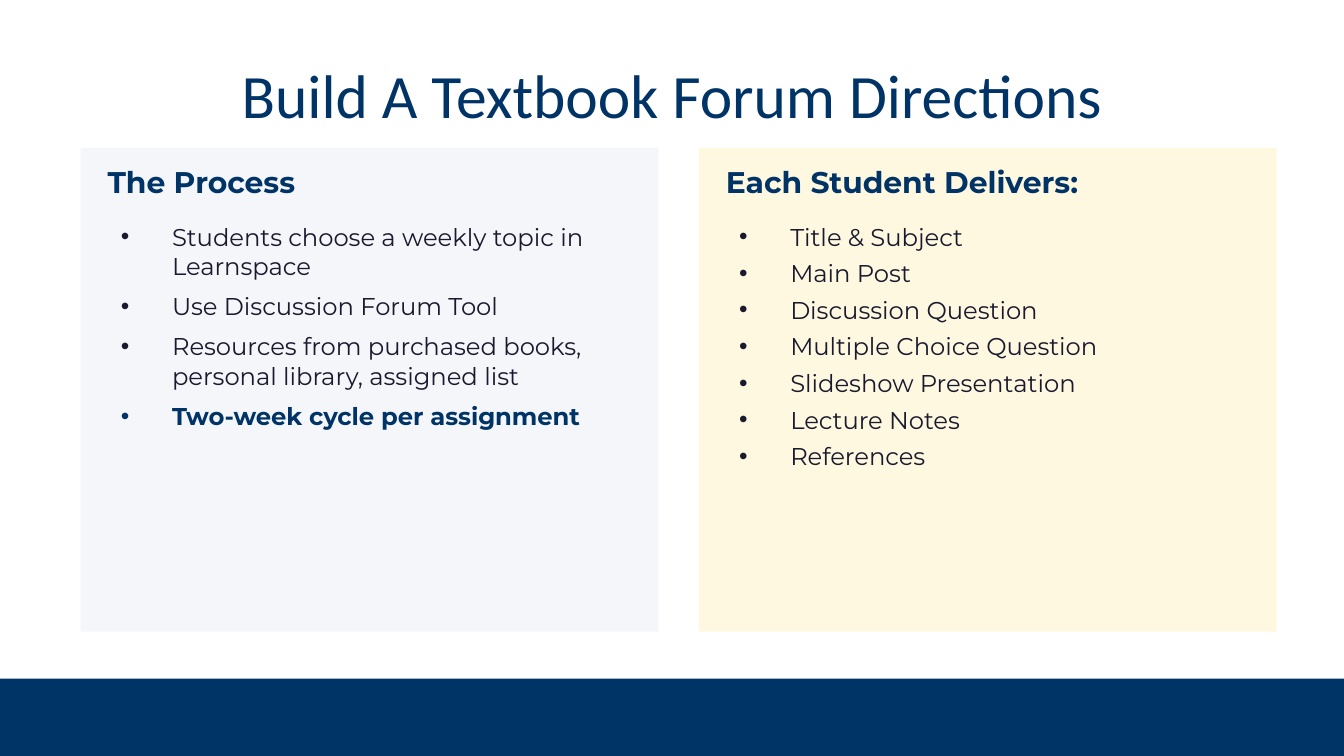
from pptx import Presentation
from pptx.dml.color import RGBColor
from pptx.enum.shapes import MSO_SHAPE
from pptx.enum.text import MSO_ANCHOR, MSO_AUTO_SIZE, PP_ALIGN
from pptx.util import Inches, Pt

WIDTH = 10
HEIGHT = WIDTH * 9 / 16
NAVY, INK = "003366", "1A1A2E"
FONT = "Montserrat"

# Column grid
LEFT, COL_W, GAP = 0.6, 4.3, 0.3
TOP, COL_H = 1.1, 3.6
PAD = 0.2
INDENT = 0.38
BAND_TOP = 5.05

# Heading, panel fill, space after each item, items, number of closing items in bold
COLUMNS = [
    ("The Process", "F5F6FA", 6, [
        "Students choose a weekly topic in Learnspace",
        "Use Discussion Forum Tool",
        "Resources from purchased books, personal library, assigned list",
        "Two-week cycle per assignment",
    ], 1),
    ("Each Student Delivers:", "FFF8E1", 4, [
        "Title & Subject",
        "Main Post",
        "Discussion Question",
        "Multiple Choice Question",
        "Slideshow Presentation",
        "Lecture Notes",
        "References",
    ], 0),
]


def color(hex_code):
    return RGBColor.from_string(hex_code)


def place(s, left, top, width, height):
    s.left, s.top = Inches(left), Inches(top)
    s.width, s.height = Inches(width), Inches(height)


def style(p, size, hex_code, bold=False, name=FONT):
    p.space_before = Pt(0)
    for r in p.runs:
        r.font.name, r.font.size, r.font.bold = name, Pt(size), bold
        r.font.color.rgb = color(hex_code)


def add_panel(slide, left, top, width, height, fill):
    """Add a plain rectangle behind everything else."""
    sp = slide.shapes.add_shape(MSO_SHAPE.RECTANGLE, Inches(left), Inches(top),
                                Inches(width), Inches(height))
    sp.shadow.inherit = False
    sp.fill.solid()
    sp.fill.fore_color.rgb = color(fill)
    sp.line.fill.background()
    slide.shapes._spTree.insert(2, sp._element)


def set_title(s, text):
    place(s, 0.5, 0.23, WIDTH - 1, 0.94)
    tf = s.text_frame
    tf.text = text
    tf.auto_size = MSO_AUTO_SIZE.NONE
    tf.vertical_anchor = MSO_ANCHOR.MIDDLE
    tf.paragraphs[0].alignment = PP_ALIGN.CENTER
    style(tf.paragraphs[0], 33, NAVY, name="Calibri")


def set_heading(s, left, text):
    place(s, left, TOP + 0.05, 4, 0.4)
    tf = s.text_frame
    tf.text = text
    tf.auto_size = MSO_AUTO_SIZE.NONE
    tf.vertical_anchor = MSO_ANCHOR.MIDDLE
    tf.margin_left = tf.margin_right = tf.margin_top = tf.margin_bottom = 0
    style(tf.paragraphs[0], 16, NAVY, bold=True)


def set_list(s, left, items, space_after, bold_count):
    place(s, left, TOP + 0.5, COL_W - 2 * PAD, 2.8)
    tf = s.text_frame
    tf.text = "\n".join(items)
    tf.auto_size = MSO_AUTO_SIZE.NONE
    for i, p in enumerate(tf.paragraphs):
        pPr = p._p.get_or_add_pPr()
        pPr.set("marL", str(Inches(INDENT)))
        pPr.set("indent", str(-Inches(INDENT)))
        p.space_after = Pt(space_after)
        bold = i >= len(items) - bold_count
        style(p, 13, NAVY if bold else INK, bold)


def main():
    prs = Presentation()
    prs.slide_width, prs.slide_height = Inches(WIDTH), Inches(HEIGHT)
    slide = prs.slides.add_slide(prs.slide_layouts.get_by_name("Comparison"))
    title, *bodies = slide.placeholders

    set_title(title, "Build A Textbook Forum Directions")
    for i, (heading, fill, space_after, items, bold_count) in enumerate(COLUMNS):
        left = LEFT + i * (COL_W + GAP)
        add_panel(slide, left, TOP, COL_W, COL_H, fill)
        set_heading(bodies[2 * i], left + PAD, heading)
        set_list(bodies[2 * i + 1], left + PAD, items, space_after, bold_count)
    add_panel(slide, 0, BAND_TOP, WIDTH, HEIGHT - BAND_TOP, NAVY)

    prs.save("out.pptx")


if __name__ == "__main__":
    main()
